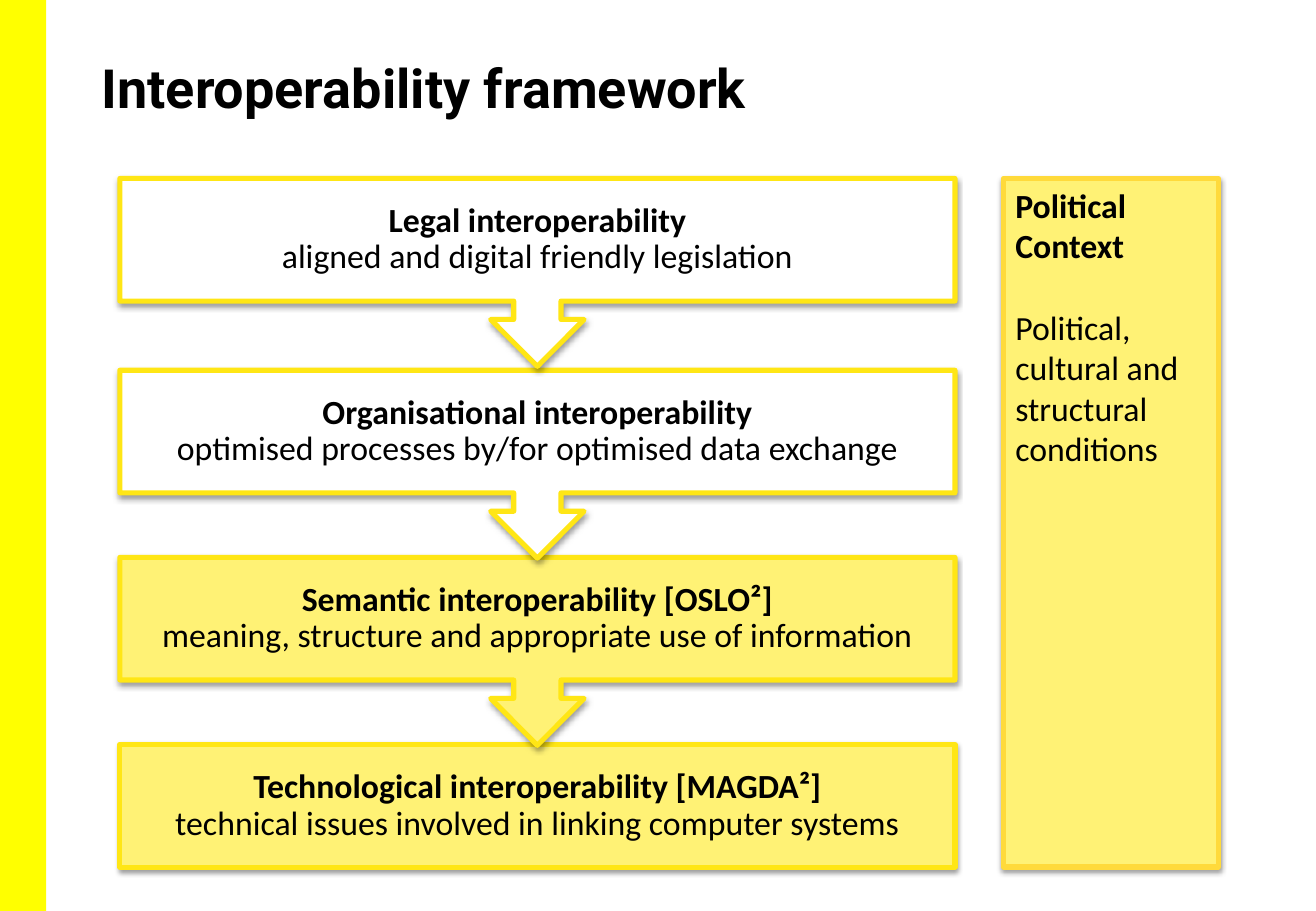
from dataclasses import dataclass
from lxml.etree import SubElement
from pptx import Presentation
from pptx.dml.color import RGBColor
from pptx.enum.shapes import MSO_SHAPE as Preset
from pptx.enum.text import MSO_ANCHOR as Anchor, PP_ALIGN as Align
from pptx.oxml.ns import qn
from pptx.util import Pt


@dataclass(frozen=True)
class Theme:
    black: str = "000000"
    white: str = "FFFFFF"
    side_bar: str = "FFFF00"
    highlight: str = "FFF275"
    step_border: str = "FFE615"
    context_border: str = "FFDA3B"
    border_width: float = 3
    title_font: str = "Roboto"
    title_size: float = 32
    body_font: str = "Calibri"
    body_size: float = 20


@dataclass(frozen=True)
class Box:
    left: float
    top: float
    width: float
    height: float

    def lengths(self):
        return [Pt(value) for value in (self.left, self.top, self.width, self.height)]


THEME = Theme()
STEPS = [
    ("Legal interoperability", "aligned and digital friendly legislation", THEME.white),
    ("Organisational interoperability", "optimised processes by/for optimised data exchange", THEME.white),
    ("Semantic interoperability [OSLO²]", "meaning, structure and appropriate use of information", THEME.highlight),
    ("Technological interoperability [MAGDA²]", "technical issues involved in linking computer systems", THEME.highlight),
]
STEP_TOPS = (105.8, 219.5, 330.4, 441.3)
STEP_HEIGHT = 72.7
STEM_HALF, HEAD_HALF = 14, 27.7
STEM_LENGTH, ARROW_LENGTH = 10.9, 38.7


def add_run(paragraph, text, bold, font=THEME.body_font, size=THEME.body_size):
    run = paragraph.add_run()
    run.text = text
    run.font.name = font
    run.font.size = Pt(size)
    run.font.bold = bold
    run.font.color.rgb = RGBColor.from_string(THEME.black)


def paint(shape, fill, border):
    shape.fill.solid()
    shape.fill.fore_color.rgb = RGBColor.from_string(fill)
    shape.line.color.rgb = RGBColor.from_string(border)
    shape.line.width = Pt(THEME.border_width)
    shape.shadow.inherit = False
    effects = shape._element.spPr.find(qn("a:effectLst"))
    shadow = SubElement(effects, qn("a:outerShdw"), blurRad=str(Pt(3.1)),
                        dist=str(Pt(1.6)), dir="5400000", rotWithShape="0")
    color = SubElement(shadow, qn("a:srgbClr"), val=THEME.black)
    SubElement(color, qn("a:alpha"), val="38000")


def add_side_bar(slide, box):
    bar = slide.shapes.add_shape(Preset.RECTANGLE, *box.lengths())
    bar.shadow.inherit = False
    bar.fill.solid()
    bar.fill.fore_color.rgb = RGBColor.from_string(THEME.side_bar)
    bar.line.fill.background()


def add_title(slide, box, text):
    frame = slide.shapes.add_textbox(*box.lengths()).text_frame
    frame.word_wrap = True
    add_run(frame.paragraphs[0], text, True, THEME.title_font, THEME.title_size)


def step_outline(box, has_arrow):
    right, bottom = box.left + box.width, box.top + box.height
    center = box.left + box.width / 2
    neck = bottom + STEM_LENGTH
    arrow = [
        (center + STEM_HALF, bottom), (center + STEM_HALF, neck),
        (center + HEAD_HALF, neck), (center, bottom + ARROW_LENGTH),
        (center - HEAD_HALF, neck), (center - STEM_HALF, neck),
        (center - STEM_HALF, bottom),
    ]
    return [(box.left, box.top), (right, box.top), (right, bottom),
            *(arrow if has_arrow else []), (box.left, bottom)]


def add_step(slide, box, heading, detail, fill, has_arrow):
    start, *others = [(Pt(x), Pt(y)) for x, y in step_outline(box, has_arrow)]
    builder = slide.shapes.build_freeform(*start)
    builder.add_line_segments(others, close=True)
    shape = builder.convert_to_shape()
    paint(shape, fill, THEME.step_border)
    frame = shape.text_frame
    frame.word_wrap = True
    frame.vertical_anchor = Anchor.MIDDLE
    frame.margin_left = frame.margin_right = frame.margin_top = Pt(10)
    frame.margin_bottom = Pt(10 + (ARROW_LENGTH if has_arrow else 0))
    paragraph = frame.paragraphs[0]
    paragraph.alignment = Align.CENTER
    paragraph.line_spacing = 0.9
    add_run(paragraph, heading, True)
    paragraph.add_line_break()
    add_run(paragraph, detail, False)


def add_steps(slide, left, width):
    last = len(STEPS) - 1
    for index in reversed(range(len(STEPS))):
        box = Box(left, STEP_TOPS[index], width, STEP_HEIGHT)
        add_step(slide, box, *STEPS[index], has_arrow=index < last)


def add_context(slide, box, heading, detail):
    shape = slide.shapes.add_shape(Preset.RECTANGLE, *box.lengths())
    paint(shape, THEME.highlight, THEME.context_border)
    frame = shape.text_frame
    frame.word_wrap = True
    frame.vertical_anchor = Anchor.TOP
    first = frame.paragraphs[0]
    second = frame.add_paragraph()
    second.space_before = Pt(24.4)
    first.alignment = second.alignment = Align.LEFT
    add_run(first, heading, True)
    add_run(second, detail, False)


def main():
    presentation = Presentation()
    presentation.slide_width, presentation.slide_height = Pt(780), Pt(540)
    slide = presentation.slides.add_slide(presentation.slide_layouts[6])
    add_side_bar(slide, Box(0, 0, 27.4, 540))
    add_steps(slide, 71, 495)
    add_context(slide, Box(594.7, 105.8, 127.5, 408.2), "Political Context",
                "Political, cultural and structural conditions")
    add_title(slide, Box(53.3, 28.8, 672.5, 77.8), "Interoperability framework")
    presentation.save("out.pptx")


if __name__ == "__main__":
    main()
